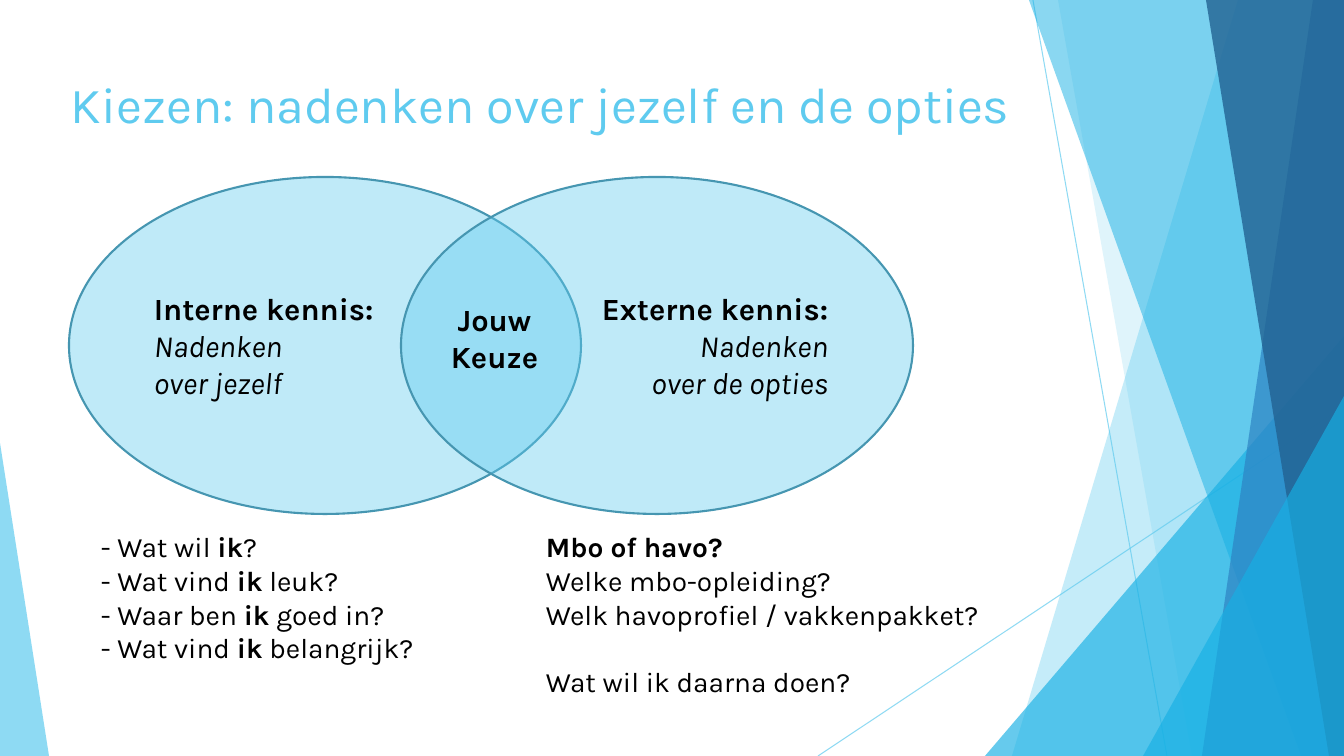
from lxml.etree import SubElement
from pptx import Presentation
from pptx.dml.color import RGBColor
from pptx.enum.shapes import MSO_CONNECTOR, MSO_SHAPE as SHAPE
from pptx.enum.text import MSO_ANCHOR, PP_ALIGN as ALIGN
from pptx.oxml.ns import qn
from pptx.util import Pt

EMU_PER_PX = 12192000 / 1344
WIDTH, HEIGHT = 1344, 756
SKY = RGBColor(0x5F, 0xCB, 0xEF)
CYAN = RGBColor(0x17, 0xB0, 0xE4)
BLUE = RGBColor(0x2E, 0x83, 0xC3)
NAVY = RGBColor(0x22, 0x62, 0x92)
TEAL = RGBColor(0x46, 0x96, 0xB1)
BLACK = RGBColor(0, 0, 0)


def px(*lengths):
    return [round(n * EMU_PER_PX) for n in lengths]


class Deck:
    font = "Karla"

    def __init__(self):
        self.prs = Presentation()
        self.prs.slide_width, self.prs.slide_height = px(WIDTH, HEIGHT)
        self.shapes = self.prs.slides.add_slide(self.prs.slide_layouts[6]).shapes

    def set_opacity(self, s, percent):
        color = s._element.spPr.find(".//" + qn("a:srgbClr"))
        SubElement(color, qn("a:alpha"), val=str(percent * 1000))

    def paint(self, s, color, opacity):
        s.shadow.inherit = False
        s.fill.solid()
        s.fill.fore_color.rgb = color
        s.line.fill.background()
        self.set_opacity(s, opacity)

    def line(self, x1, y1, x2, y2):
        s = self.shapes.add_connector(MSO_CONNECTOR.STRAIGHT, *px(x1, y1, x2, y2))
        s.line.color.rgb = SKY
        s.line.width = Pt(0.75)
        self.set_opacity(s, 70)
        SubElement(s._element.spPr, qn("a:effectLst"))

    def band(self, top_x, bottom_x, color, opacity):
        builder = self.shapes.build_freeform(top_x, 0, scale=EMU_PER_PX)
        builder.add_line_segments([(WIDTH, 0), (WIDTH, HEIGHT), (bottom_x, HEIGHT)])
        self.paint(builder.convert_to_shape(), color, opacity)

    def triangle(self, x, y, w, h, apex, color, opacity):
        s = self.shapes.add_shape(SHAPE.ISOSCELES_TRIANGLE, *px(x, y, w, h))
        s.adjustments[0] = apex
        self.paint(s, color, opacity)

    def ellipse(self, x, y, w, h, paragraphs, align):
        s = self.shapes.add_shape(SHAPE.OVAL, *px(x, y, w, h))
        self.paint(s, SKY, 40)
        s.line.color.rgb = TEAL
        s.line.width = Pt(1.5)
        s.text_frame.vertical_anchor = MSO_ANCHOR.MIDDLE
        self.fill_text(s.text_frame, paragraphs, 22, align=align)

    def text(self, x, y, w, h, paragraphs, size, color=BLACK, align=ALIGN.LEFT):
        s = self.shapes.add_textbox(*px(x, y, w, h))
        s.text_frame.word_wrap = True
        return self.fill_text(s.text_frame, paragraphs, size, color, align)

    def fill_text(self, tf, paragraphs, size, color=BLACK, align=ALIGN.LEFT):
        for i, runs in enumerate(paragraphs):
            p = tf.add_paragraph() if i else tf.paragraphs[0]
            p.alignment = align
            for text, style in runs:
                for j, part in enumerate(text.split("\n")):
                    if j:
                        p.add_line_break()
                    r = p.add_run()
                    r.text = part
                    r.font.name = self.font
                    r.font.size = Pt(size)
                    r.font.color.rgb = color
                    r.font.bold = style == "bold"
                    r.font.italic = style == "italic"
        return tf


def main():
    deck = Deck()
    deck.line(1033, 0, 1167, HEIGHT)
    deck.line(WIDTH, 406, 818, HEIGHT)
    deck.band(1238, 1012, SKY, 36)
    deck.band(1058, 1192, SKY, 20)
    deck.triangle(985, 336, 359, 420, 1, CYAN, 66)
    deck.band(1029, 1301, CYAN, 50)
    deck.band(1313, 1202, BLUE, 70)
    deck.band(1206, 1329, NAVY, 80)
    deck.triangle(1143, 396, 201, 360, 1, CYAN, 66)
    deck.triangle(0, 443, 49, 313, 0, SKY, 70)

    title = "Kiezen: nadenken over jezelf en de opties"
    deck.text(61, 68, 982, 145, [[(title, "")]], 36, SKY)

    circles = [
        (69, "Interne kennis:", "Nadenken\nover jezelf", ALIGN.LEFT),
        (401, "Externe kennis:", "Nadenken\nover de opties", ALIGN.RIGHT),
    ]
    for x, heading, detail, align in circles:
        paragraphs = [[(heading, "bold")], [(detail, "italic")]]
        deck.ellipse(x, 177, 512, 337, paragraphs, align)
    deck.text(434, 296, 121, 85, [[("Jouw Keuze", "bold")]], 22, align=ALIGN.CENTER)

    questions = [
        ("- Wat wil ", "?"),
        ("- Wat vind ", " leuk?"),
        ("- Waar ben ", " goed in?"),
        ("- Wat vind ", " belangrijk?"),
    ]
    paragraphs = [[(start, ""), ("ik", "bold"), (end, "")] for start, end in questions]
    deck.text(91, 525, 344, 146, paragraphs, 20)

    options = [
        [("Mbo of havo?", "bold")],
        [("Welke mbo-opleiding?", "")],
        [("Welk havoprofiel / vakkenpakket?", "")],
        [("Wat wil ik daarna doen?", "")],
    ]
    tf = deck.text(536, 525, 487, 179, options, 20)
    tf.paragraphs[-1].space_before = Pt(24)

    deck.prs.save("out.pptx")


if __name__ == "__main__":
    main()
